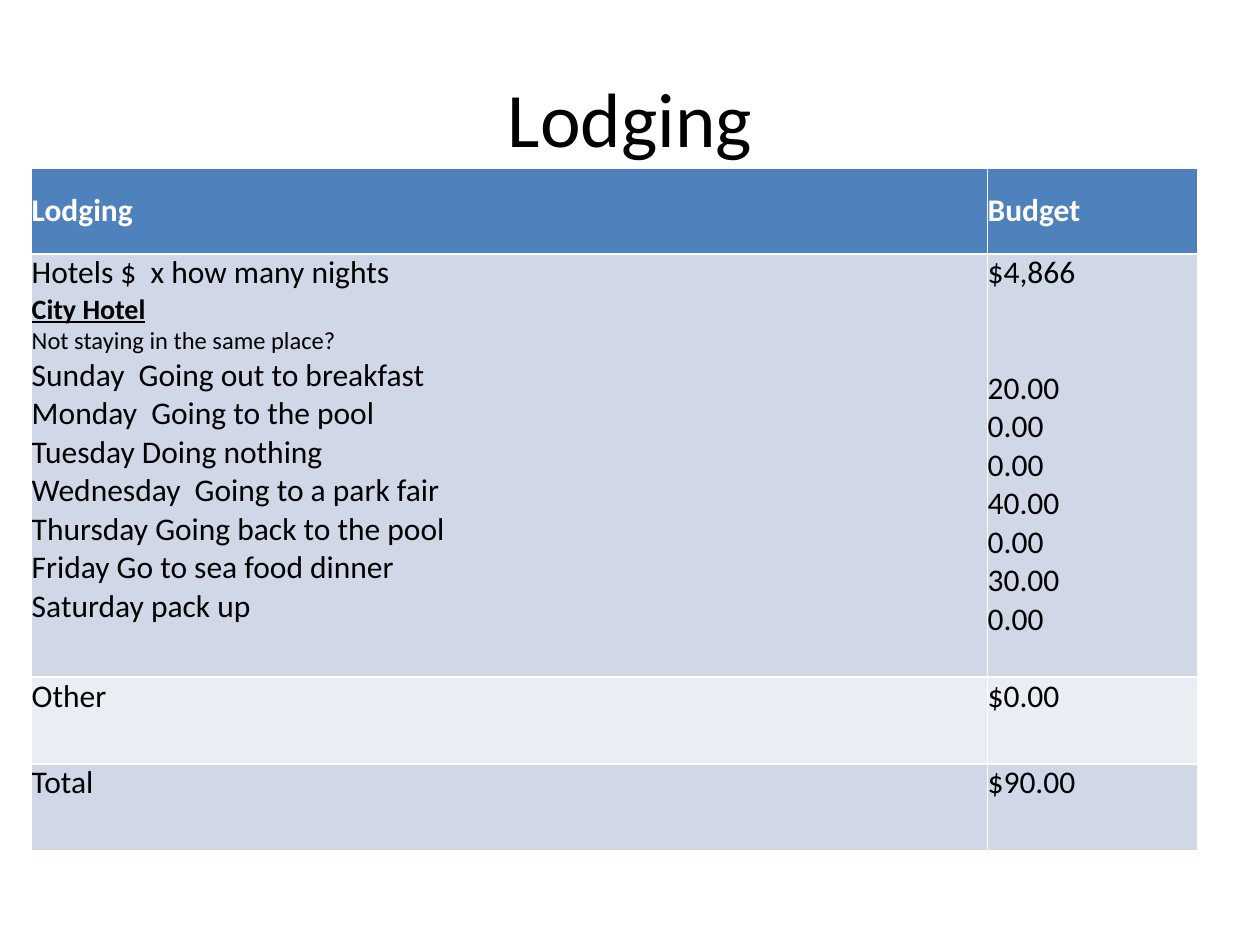
from pptx import Presentation
from pptx.dml.color import RGBColor
from pptx.enum.text import MSO_ANCHOR as Anchor, PP_ALIGN as Align
from pptx.util import Cm, Pt

FONT = "Calibri"
BLACK = RGBColor(0x00, 0x00, 0x00)
WHITE = RGBColor(0xFF, 0xFF, 0xFF)
HEADER_BLUE = RGBColor(0x4F, 0x81, 0xBD)
BAND_DARK = RGBColor(0xD0, 0xD8, 0xE8)
BAND_LIGHT = RGBColor(0xE9, 0xED, 0xF4)

COLUMN_SHARES = (0.82, 0.18)
ROW_HEIGHTS = (1.73, 8.53, 1.75, 1.75)
COST_GAP = Pt(44)  # keeps the daily costs below the hotel price

PLANS = [
    "Sunday  Going out to breakfast",
    "Monday  Going to the pool",
    "Tuesday Doing nothing",
    "Wednesday  Going to a park fair",
    "Thursday Going back to the pool",
    "Friday Go to sea food dinner",
    "Saturday pack up",
]
COSTS = ["20.00", "0.00", "0.00", "40.00", "0.00", "30.00", "0.00"]
ROWS = [
    (["Lodging"], ["Budget"]),
    (["Hotels $  x how many nights", "City Hotel",
      "Not staying in the same place?", *PLANS], ["$4,866", *COSTS]),
    (["Other"], ["$0.00"]),
    (["Total"], ["$90.00"]),
]


def add_run(paragraph, text, size=18, color=BLACK, bold=False):
    run = paragraph.add_run()
    run.text = text
    font = run.font
    font.name, font.size, font.bold = FONT, Pt(size), bold
    font.color.rgb = color
    return run


def add_title(slide, left, top, width, height):
    frame = slide.shapes.add_textbox(left, top, width, height).text_frame
    frame.word_wrap = True
    frame.vertical_anchor = Anchor.MIDDLE
    paragraph = frame.paragraphs[0]
    paragraph.alignment = Align.CENTER
    add_run(paragraph, "Lodging", size=44)


def fill_cell(cell, lines, fill, **style):
    cell.margin_left = cell.margin_right = cell.margin_top = cell.margin_bottom = 0
    cell.fill.solid()
    cell.fill.fore_color.rgb = fill
    frame = cell.text_frame
    for index, line in enumerate(lines):
        paragraph = frame.add_paragraph() if index else frame.paragraphs[0]
        add_run(paragraph, line, **style)


def add_budget_table(slide, left, top, width, height):
    table = slide.shapes.add_table(
        len(ROWS), len(COLUMN_SHARES), left, top, width, height).table
    for column, share in zip(table.columns, COLUMN_SHARES):
        column.width = int(width * share)
    for row, share in zip(table.rows, ROW_HEIGHTS):
        row.height = int(height * share / sum(ROW_HEIGHTS))

    for row_index, row in enumerate(ROWS):
        for column_index, lines in enumerate(row):
            cell = table.cell(row_index, column_index)
            if row_index == 0:
                fill_cell(cell, lines, HEADER_BLUE, color=WHITE, bold=True)
                cell.vertical_anchor = Anchor.MIDDLE
            else:
                fill_cell(cell, lines, BAND_DARK if row_index % 2 else BAND_LIGHT)

    # Hotel name and remark stand out from the daily plans
    hotel, remark = table.cell(1, 0).text_frame.paragraphs[1:3]
    hotel_font = hotel.runs[0].font
    hotel_font.size, hotel_font.bold, hotel_font.underline = Pt(16), True, True
    remark.runs[0].font.size = Pt(14)
    table.cell(1, 1).text_frame.paragraphs[1].space_before = COST_GAP


def main():
    presentation = Presentation()
    presentation.slide_width, presentation.slide_height = Cm(25.4), Cm(19.05)
    slide = presentation.slides.add_slide(presentation.slide_layouts[6])
    add_title(slide, Cm(1.27), Cm(0.76), Cm(22.86), Cm(3.18))
    add_budget_table(slide, Cm(0.64), Cm(3.39), Cm(23.5), Cm(sum(ROW_HEIGHTS)))
    presentation.save("out.pptx")


if __name__ == "__main__":
    main()
